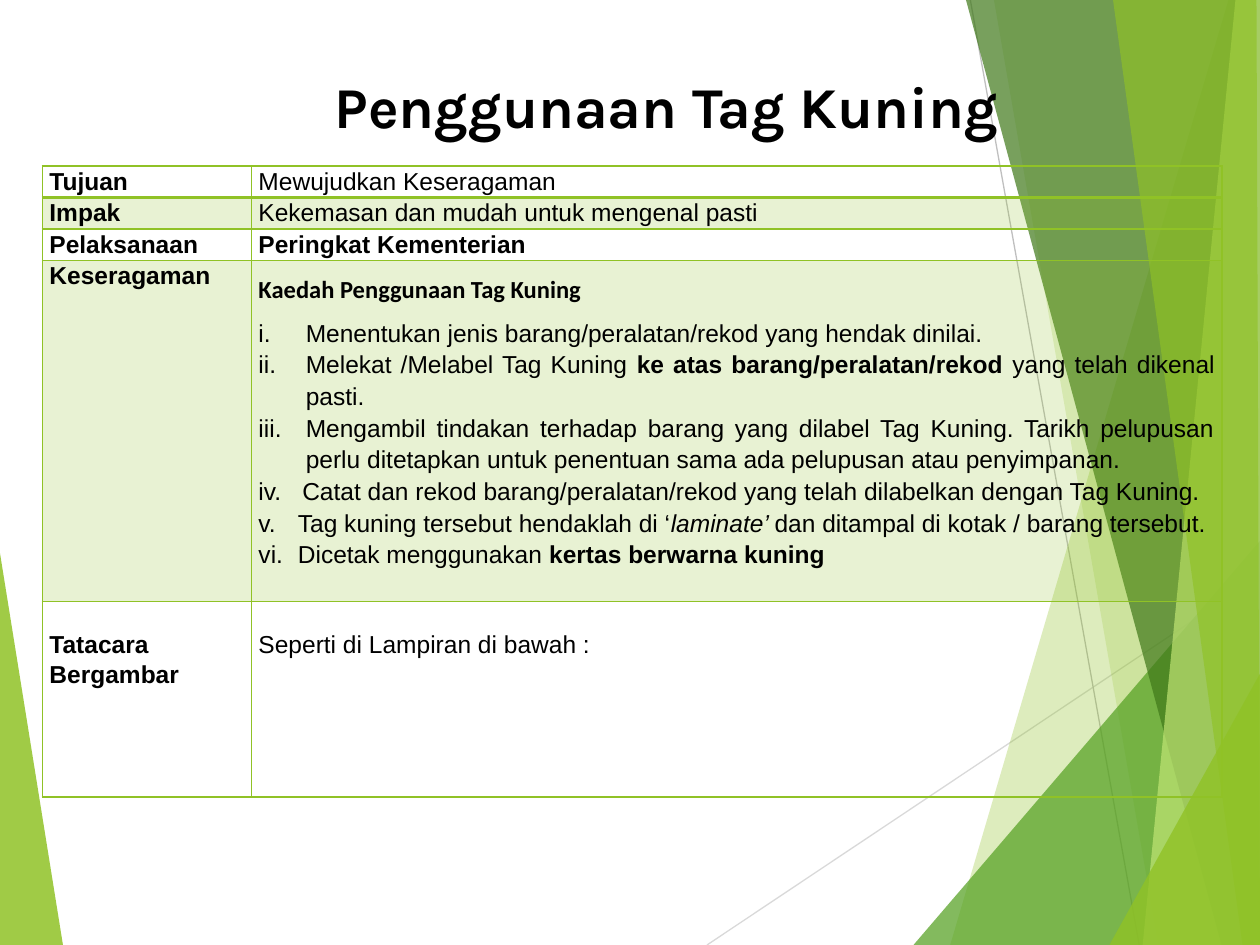
from typing import NamedTuple

from lxml.etree import SubElement
from pptx import Presentation
from pptx.dml.color import RGBColor
from pptx.enum.shapes import MSO_CONNECTOR as Connector
from pptx.enum.text import MSO_ANCHOR as Anchor, PP_ALIGN as Align
from pptx.oxml import parse_xml
from pptx.oxml.ns import nsdecls, qn
from pptx.util import Pt

WIDTH, HEIGHT = 720, 540
BLACK = RGBColor(0x00, 0x00, 0x00)
LIME = RGBColor(0x90, 0xC2, 0x26)
GREEN = RGBColor(0x54, 0xA0, 0x21)
DARK_GREEN = RGBColor(0x3F, 0x78, 0x19)
PALE_LIME = RGBColor(0xC0, 0xE4, 0x74)
LIGHT_GRAY = RGBColor(0xD9, 0xD9, 0xD9)
GRAY = RGBColor(0xBF, 0xBF, 0xBF)


class Facet(NamedTuple):
    points: list[tuple[float, float]]
    color: RGBColor
    opacity: int


class Ray(NamedTuple):
    start: tuple[float, float]
    end: tuple[float, float]
    color: RGBColor


class Run(NamedTuple):
    text: str
    bold: bool = False
    italic: bool = False
    font: str = "Arial"
    size: float = 14


class Para(NamedTuple):
    runs: list[Run]
    spacing: float = 1.07
    after: float = 0
    hanging: float = 0  # numbered when above zero
    align: Align = Align.LEFT


class Row(NamedTuple):
    label: str
    content: list[Para]
    height: float
    shaded: bool = False
    top_margin: float = 0


def band(top: float, bottom: float, color: RGBColor, opacity: int,
         top_right: float = WIDTH) -> Facet:
    """A facet from the top edge to the bottom edge, out to the right."""
    return Facet([(top, 0), (bottom, HEIGHT), (WIDTH, HEIGHT), (top_right, 0)],
                 color, opacity)


def corner(left: float, top: float, color: RGBColor, opacity: int) -> Facet:
    """A triangle in the bottom right corner."""
    return Facet([(left, HEIGHT), (WIDTH, top), (WIDTH, HEIGHT)], color, opacity)


def step(hanging: float, *runs: Run) -> Para:
    return Para(list(runs), spacing=1.15, hanging=hanging, align=Align.JUSTIFY)


LEFT_FACET = Facet([(0, 316), (35.5, HEIGHT), (0, HEIGHT)], LIME, 85)
RAYS = [
    Ray((404, HEIGHT), (WIDTH, 329), LIGHT_GRAY),
    Ray((554.5, 0), (651, HEIGHT), GRAY),
]
RIGHT_FACETS = [
    band(702, 543, LIME, 30),
    band(567.5, 661.5, LIME, 20),
    corner(522.5, 309, GREEN, 72),
    band(552, 698.5, DARK_GREEN, 70),
    band(706.5, 653, PALE_LIME, 70),
    band(635.5, 710, LIME, 65, top_right=718.5),
    corner(634.5, 385, LIME, 80),
]

TITLE = Para([Run("Penggunaan Tag Kuning ", bold=True, font="Karla", size=33)],
             spacing=0.9, align=Align.CENTER)

STEPS = [
    Para([Run("Kaedah Penggunaan Tag Kuning", bold=True, font="Calibri")],
         spacing=1.5, after=6),
    step(27, Run("Menentukan jenis barang/peralatan/rekod yang hendak dinilai. ")),
    step(27, Run("Melekat /Melabel Tag Kuning "),
         Run("ke atas barang/peralatan/rekod ", bold=True),
         Run("yang telah dikenal pasti. ")),
    step(27, Run("Mengambil tindakan terhadap barang yang dilabel Tag Kuning. "
                 "Tarikh pelupusan perlu ditetapkan untuk penentuan sama ada "
                 "pelupusan atau penyimpanan. ")),
    step(25, Run("Catat dan rekod barang/peralatan/rekod yang telah dilabelkan "
                 "dengan Tag Kuning.")),
    step(22.5, Run("Tag kuning tersebut hendaklah di ‘"),
         Run("laminate’ ", italic=True),
         Run("dan ditampal di kotak / barang tersebut.")),
    step(22.5, Run("Dicetak menggunakan "), Run("kertas berwarna kuning", bold=True)),
]

COLUMN_WIDTHS = [119.5, 554.5]
ROWS = [
    Row("Tujuan", [Para([Run("Mewujudkan Keseragaman")])], 16.8),
    Row("Impak", [Para([Run("Kekemasan dan mudah untuk mengenal pasti")])], 16.8, True),
    Row("Pelaksanaan", [Para([Run("Peringkat Kementerian", bold=True)])], 16.8),
    Row("Keseragaman", STEPS, 194.8, True),
    Row("Tatacara Bergambar", [Para([Run("Seperti di Lampiran di bawah :")])],
        111.6, top_margin=16),
]


def set_fill(fill, color: RGBColor, opacity: int) -> None:
    fill.solid()
    fill.fore_color.rgb = color
    color_element = fill._xPr.find(qn("a:solidFill"))[0]
    SubElement(color_element, qn("a:alpha"), val=str(opacity * 1000))


def draw_facet(slide, facet: Facet) -> None:
    builder = slide.shapes.build_freeform(*facet.points[0], scale=Pt(1))
    builder.add_line_segments(facet.points[1:], close=True)
    shape = builder.convert_to_shape()
    shape.shadow.inherit = False
    set_fill(shape.fill, facet.color, facet.opacity)
    shape.line.fill.background()


def draw_ray(slide, ray: Ray) -> None:
    ends = [Pt(length) for length in ray.start + ray.end]
    connector = slide.shapes.add_connector(Connector.STRAIGHT, *ends)
    connector.line.color.rgb = ray.color
    connector.line.width = Pt(0.75)
    SubElement(connector._element.spPr, qn("a:effectLst"))


def write_text(text_frame, paras: list[Para]) -> None:
    for index, para in enumerate(paras):
        paragraph = text_frame.add_paragraph() if index else text_frame.paragraphs[0]
        paragraph.alignment = para.align
        paragraph.line_spacing = para.spacing
        paragraph.space_after = Pt(para.after)
        if para.hanging:
            properties = paragraph._p.get_or_add_pPr()
            properties.set("marL", str(Pt(para.hanging)))
            properties.set("indent", str(-Pt(para.hanging)))
            SubElement(properties, qn("a:buAutoNum"), type="romanLcPeriod")
        for part in para.runs:
            run = paragraph.add_run()
            run.text = part.text
            run.font.name = part.font
            run.font.size = Pt(part.size)
            run.font.bold = part.bold
            run.font.italic = part.italic
            run.font.color.rgb = BLACK


def set_borders(cell, widths: dict[str, float]) -> None:
    properties = cell._tc.get_or_add_tcPr()
    for index, (side, width) in enumerate(widths.items()):
        properties.insert(index, parse_xml(
            f'<a:{side} {nsdecls("a")} w="{Pt(width)}"><a:solidFill>'
            f'<a:srgbClr val="{LIME}"/></a:solidFill></a:{side}>'))


def draw_table(slide, rows: list[Row]) -> None:
    frame = slide.shapes.add_table(
        len(rows), len(COLUMN_WIDTHS), Pt(24.25), Pt(95),
        Pt(sum(COLUMN_WIDTHS)), Pt(sum(row.height for row in rows)))
    table = frame.table
    table.first_row = table.horz_banding = False
    for column, width in zip(table.columns, COLUMN_WIDTHS):
        column.width = Pt(width)
    for index, row in enumerate(rows):
        table.rows[index].height = Pt(row.height)
        label = [Para([Run(row.label, bold=True)])]
        for cell, paras in zip(table.rows[index].cells, (label, row.content)):
            cell.margin_left = cell.margin_right = Pt(4)
            cell.margin_top, cell.margin_bottom = Pt(row.top_margin), Pt(0)
            write_text(cell.text_frame, paras)
            if row.shaded:
                set_fill(cell.fill, LIME, 20)
            else:
                cell.fill.background()
            set_borders(cell, {"lnL": 1, "lnR": 1, "lnT": 2 if index == 1 else 1,
                               "lnB": 2 if index == 0 else 1})


def main() -> None:
    presentation = Presentation()
    presentation.slide_width, presentation.slide_height = Pt(WIDTH), Pt(HEIGHT)
    slide = presentation.slides.add_slide(presentation.slide_layouts[6])

    # Background facets and rays
    draw_facet(slide, LEFT_FACET)
    for ray in RAYS:
        draw_ray(slide, ray)
    for facet in RIGHT_FACETS:
        draw_facet(slide, facet)

    # Title
    title = slide.shapes.add_textbox(Pt(118), Pt(42), Pt(534), Pt(41)).text_frame
    title.word_wrap = True
    title.vertical_anchor = Anchor.MIDDLE
    write_text(title, [TITLE])

    # Table
    draw_table(slide, ROWS)
    presentation.save("out.pptx")


if __name__ == "__main__":
    main()
